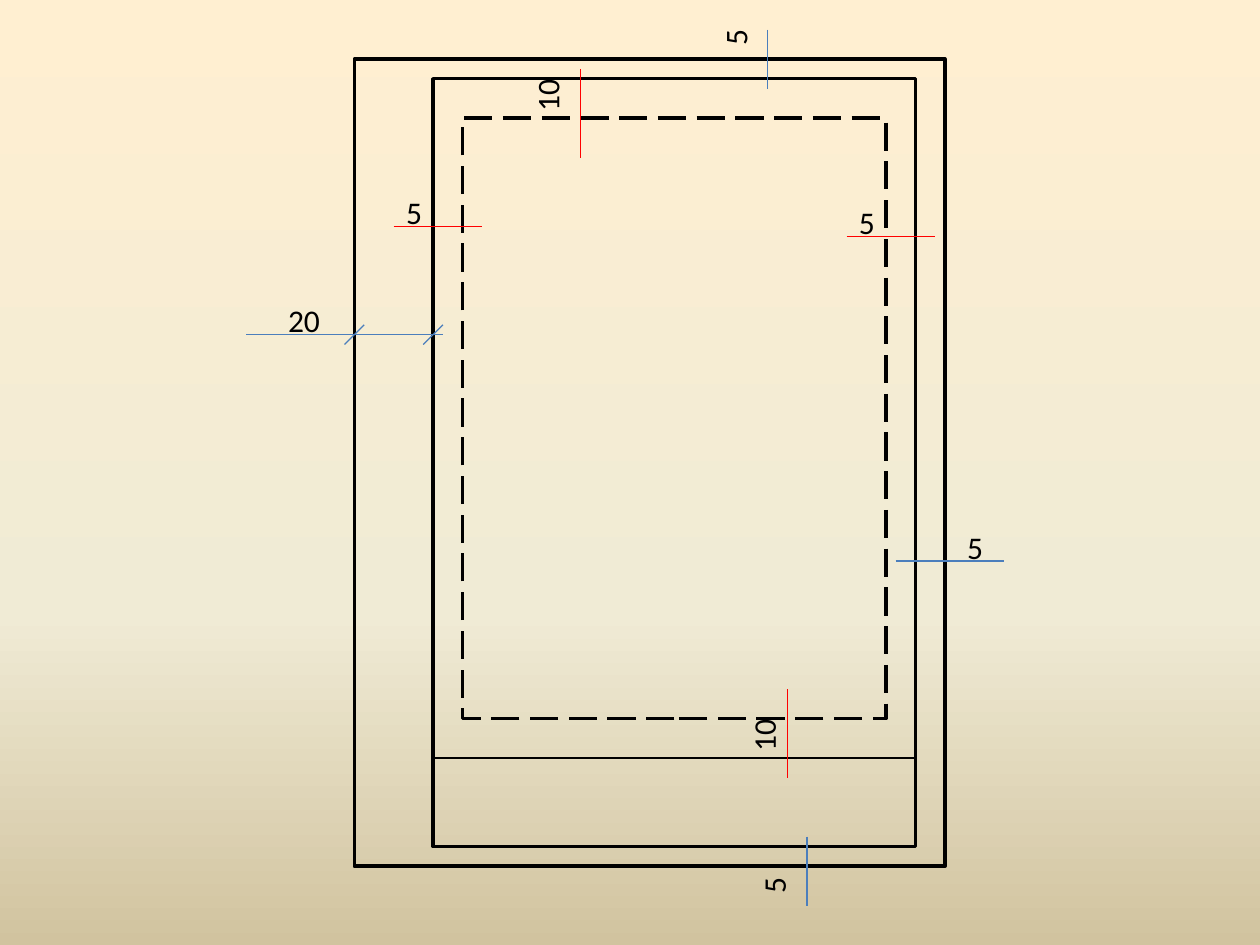
from copy import deepcopy
from dataclasses import dataclass

from pptx import Presentation
from pptx.dml.color import RGBColor
from pptx.enum.dml import MSO_LINE
from pptx.enum.shapes import MSO_CONNECTOR, MSO_SHAPE
from pptx.enum.text import MSO_AUTO_SIZE
from pptx.oxml.ns import qn
from pptx.util import Emu, Pt

RECTANGLE = MSO_SHAPE.RECTANGLE
STRAIGHT = MSO_CONNECTOR.STRAIGHT
LONG_DASH = MSO_LINE.LONG_DASH
FIT_SHAPE = MSO_AUTO_SIZE.SHAPE_TO_FIT_TEXT

PX_PER_INCH = 128
PAGE_W, PAGE_H = 1280, 960
SHEET = (360, 60, 600, 820)


@dataclass(frozen=True)
class Theme:
    ink: str = "000000"
    outer: str = "4B7EBC"
    inner: str = "FF0000"
    background: tuple = ((0, "FFEFD1"), (0.65, "F0EBD5"), (1, "D1C39F"))
    font: str = "Calibri"
    size: int = 18
    border: float = 2
    divider: float = 1
    dimension: float = 0.75


THEME = Theme()


def px(*lengths):
    return [Emu(round(length * 914400 / PX_PER_INCH)) for length in lengths]


def paint_background(page):
    fill = page.background.fill
    fill.gradient()
    fill.gradient_angle = 270
    stop_list = page.background._cSld.find(".//" + qn("a:gsLst"))
    stop_list.append(deepcopy(stop_list[-1]))
    for stop, (position, color) in zip(fill.gradient_stops, THEME.background):
        stop.position = position
        stop.color.rgb = RGBColor.from_string(color)


def format_line(line, color, width):
    line.color.rgb = RGBColor.from_string(color)
    line.width = Pt(width)


def add_frame(page, box, dash=None):
    frame = page.shapes.add_shape(RECTANGLE, *px(*box))
    frame.shadow.inherit = False
    frame.fill.background()
    format_line(frame.line, THEME.ink, THEME.border)
    if dash:
        frame.line.dash_style = dash


def add_line(page, start, end, color, width=THEME.dimension):
    line = page.shapes.add_connector(STRAIGHT, *px(*start, *end))
    format_line(line.line, color, width)
    properties = line._element.spPr
    properties.append(properties.makeelement(qn("a:effectLst"), {}))


def add_text(page, text, box, vertical=False, wrap=False):
    label = page.shapes.add_textbox(*px(*box))
    frame = label.text_frame
    frame.word_wrap = wrap
    frame.auto_size = FIT_SHAPE
    if vertical:
        frame._txBody.bodyPr.set("vert", "vert270")
    span = frame.paragraphs[0].add_run()
    span.text = text
    span.font.name = THEME.font
    span.font.size = Pt(THEME.size)
    span.font.color.rgb = RGBColor.from_string(THEME.ink)


def draw_sheet(page, box):
    """Draw the sheet edge, its border, the dashed drawing field and the title strip."""
    left, top, width, height = box
    add_frame(page, box)
    border = (left + 80, top + 20, width - 110, height - 40)
    add_frame(page, border)
    x, y, w, h = border
    add_frame(page, (x + 30, y + 40, w - 60, h - 170), dash=LONG_DASH)
    strip_y = y + h - 90
    add_line(page, (x, strip_y), (x + w, strip_y), THEME.ink, THEME.divider)


def draw_dimensions(page, box):
    """Draw outer margins, then inner ones, as offsets from the sheet corner."""
    left, top = box[:2]
    # start, end, colour, text, text position
    horizontal = (
        ((-110, 280), (90, 280), THEME.outer, "20", (-80, 240)),
        ((550, 510), (660, 510), THEME.outer, "5", (610, 470)),
        ((40, 170), (130, 170), THEME.inner, "5", (40, 130)),
        ((500, 180), (590, 180), THEME.inner, "5", (500, 140)),
    )
    vertical = (
        ((420, -30), (420, 30), THEME.outer, "5", (361, -31)),
        ((460, 790), (460, 860), THEME.outer, "5", (400, 830)),
        ((230, 10), (230, 100), THEME.inner, "10", (170, 20)),
        ((440, 640), (440, 730), THEME.inner, "10", (390, 670)),
    )

    def place(point):
        return left + point[0], top + point[1]

    for upright, dimensions in ((False, horizontal), (True, vertical)):
        for start, end, color, text, corner in dimensions:
            add_line(page, place(start), place(end), color)
            two_digits = len(text) == 2
            if upright:
                size = (64, 46 if two_digits else 30)
            else:
                size = (60 if two_digits else 42, 51)
            add_text(page, text, (*place(corner), *size), vertical=upright,
                     wrap=two_digits and not upright)

    for x in (0, 80):
        add_line(page, place((x + 10, 270)), place((x - 10, 290)), THEME.outer)


def main():
    deck = Presentation()
    deck.slide_width, deck.slide_height = px(PAGE_W, PAGE_H)
    page = deck.slides.add_slide(deck.slide_layouts[6])
    paint_background(page)
    draw_sheet(page, SHEET)
    draw_dimensions(page, SHEET)
    deck.save("out.pptx")


if __name__ == "__main__":
    main()
